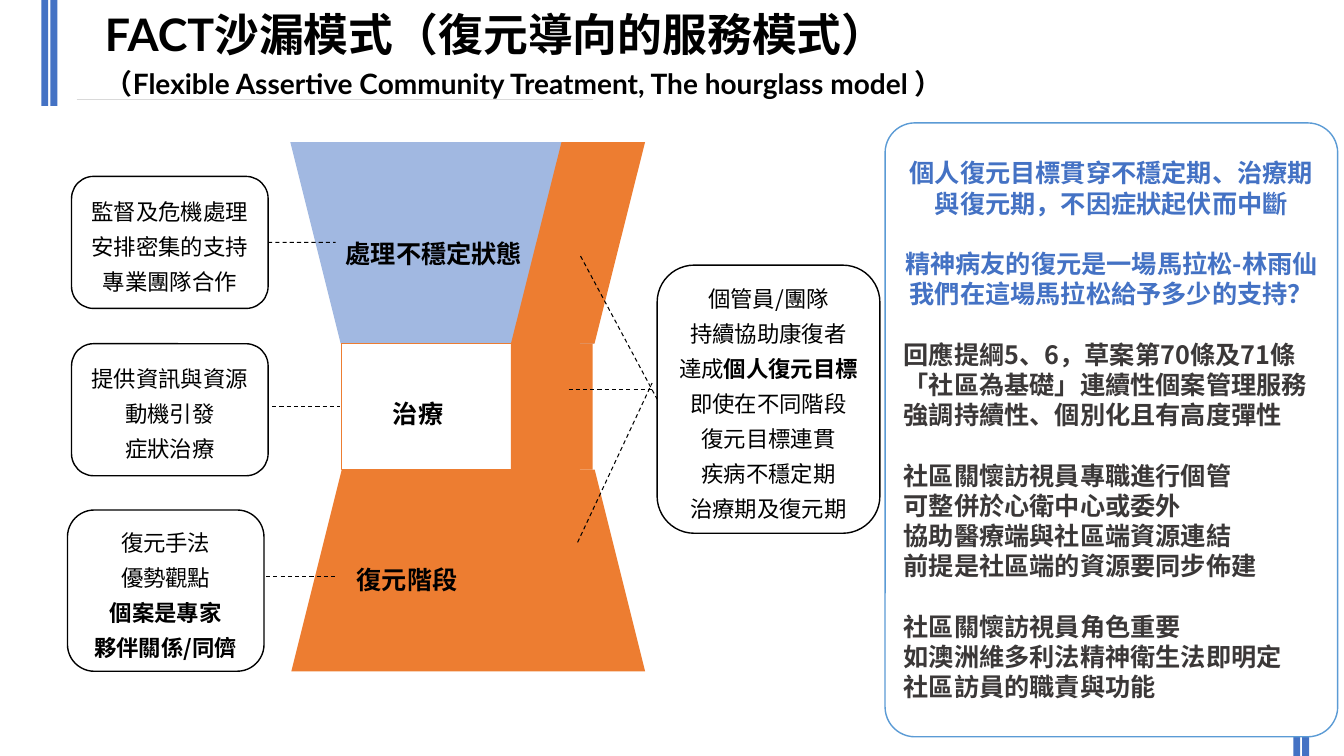
"""Build the FACT hourglass model slide."""
from dataclasses import dataclass
from typing import Optional

import pptx
import pptx.dml.color
import pptx.enum.dml
import pptx.enum.shapes
import pptx.enum.text
import pptx.oxml.ns
import pptx.shapes.autoshape
import pptx.slide
import pptx.text.text
import pptx.util
from lxml import etree

Pt = pptx.util.Pt
Color = pptx.dml.color.RGBColor
Kind = pptx.enum.shapes.MSO_SHAPE
Align = pptx.enum.text.PP_ALIGN
Anchor = pptx.enum.text.MSO_ANCHOR

BLACK = Color(0x00, 0x00, 0x00)
WHITE = Color(0xFF, 0xFF, 0xFF)
BLUE = Color(0x44, 0x72, 0xC4)
SKY = Color(0x5B, 0x9B, 0xD5)
ORANGE = Color(0xED, 0x7D, 0x31)
CHARCOAL = Color(0x3B, 0x38, 0x38)
SILVER = Color(0xD9, 0xD9, 0xD9)
BODY_FONT = "Noto Sans CJK SC"
TITLE_FONT = "Lato"


@dataclass(frozen=True)
class Span:
    text: str
    size: float = 16
    bold: bool = False
    color: Color = BLACK
    font: str = BODY_FONT


@dataclass(frozen=True)
class Para:
    spans: tuple[Span, ...]
    align: Align = Align.CENTER
    pitch: float = 25
    before: float = 0


@dataclass(frozen=True)
class Box:
    left: float
    top: float
    width: float
    height: float
    kind: Kind = Kind.RECTANGLE
    fill: Optional[Color] = None
    line: Optional[Color] = None
    adjust: Optional[float] = None
    rotation: float = 0
    alpha: Optional[int] = None
    paras: tuple[Para, ...] = ()


@dataclass(frozen=True)
class Link:
    start: tuple[float, float]
    end: tuple[float, float]
    start_box: Optional[str] = None
    end_box: Optional[str] = None


def lines(*texts: str, bold: bool = False) -> tuple[Para, ...]:
    return tuple(Para((Span(text, bold=bold),)) for text in texts)


def panel(texts: list[str], color: Color, align: Align, before: float) -> tuple[Para, ...]:
    return tuple(
        Para((Span(text, 18, True, color),), align, 21.6, 0 if index else before)
        for index, text in enumerate(texts)
    )


def label(text: str) -> tuple[Para, ...]:
    return (Para((Span(text, 18, True),), Align.LEFT, 28),)


TITLE = (
    Para((Span("FACT沙漏模式（復元導向的服務模式）", 32, True, BLACK, TITLE_FONT),), Align.LEFT, 38.4),
    Para(
        (Span("（Flexible Assertive Community Treatment, The hourglass model ）", 20, True, BLACK, TITLE_FONT),),
        Align.LEFT, 24, 4,
    ),
)

BARS = [
    Box(left, top, 5, height, fill=BLUE)
    for top, height, lefts in ((0, 75.6, (29.5, 36)), (521.3, 18.7, (923.8, 930.2)))
    for left in lefts
]

HOURGLASS = [
    Box(207.4, 101.5, 252.7, 144, Kind.TRAPEZOID, BLUE, rotation=180, alpha=50),
    Box(244.1, 245.5, 169.9, 90, fill=WHITE, line=ORANGE),
    Box(208.1, 335.5, 252.7, 144, Kind.TRAPEZOID, ORANGE),
    Box(365, 101.5, 95.8, 144, Kind.PARALLELOGRAM, ORANGE, adjust=0.377),
    Box(365, 245.5, 58.3, 90, fill=ORANGE),
]

LABELS = [
    Box(239.8, 160.6, 157, 33.1, paras=label("處理不穩定狀態")),
    Box(273.6, 274.3, 70.6, 33.1, paras=label("治療")),
    Box(247.7, 393.1, 108, 33.1, paras=label("復元階段")),
]

NOTES = {
    "crisis": Box(51.1, 126, 140.4, 94.3, Kind.ROUNDED_RECTANGLE, WHITE, BLACK,
                  paras=lines("監督及危機處理", "安排密集的支持", "專業團隊合作")),
    "treatment": Box(51.1, 245.5, 140.4, 94.3, Kind.ROUNDED_RECTANGLE, WHITE, BLACK,
                     paras=lines("提供資訊與資源", "動機引發", "症狀治療")),
    "recovery": Box(48.2, 364.3, 140.4, 115.2, Kind.ROUNDED_RECTANGLE, WHITE, BLACK,
                    paras=lines("復元手法", "優勢觀點") + lines("個案是專家", "夥伴關係/同儕", bold=True)),
    "manager": Box(469.4, 189.4, 159.1, 191.5, Kind.ROUNDED_RECTANGLE, WHITE, BLACK,
                   paras=lines("個管員/團隊", "持續協助康復者")
                   + (Para((Span("達成"), Span("個人復元目標", bold=True))),)
                   + lines("即使在不同階段", "復元目標連貫", "疾病不穩定期", "治療期及復元期")),
    "policy": Box(
        632.2, 87.8, 323.3, 438.5, Kind.ROUNDED_RECTANGLE, WHITE, SKY, 0.066,
        paras=panel(["個人復元目標貫穿不穩定期、治療期與復元期，不因症狀起伏而中斷"], BLUE, Align.CENTER, 0)
        + panel(["精神病友的復元是一場馬拉松-林雨仙", "我們在這場馬拉松給予多少的支持？"], BLUE, Align.CENTER, 21.6)
        + panel(["回應提綱5、6，草案第70條及71條", "「社區為基礎」連續性個案管理服務",
                 "強調持續性、個別化且有高度彈性"], CHARCOAL, Align.LEFT, 21.6)
        + panel(["社區關懷訪視員專職進行個管", "可整併於心衛中心或委外",
                 "協助醫療端與社區端資源連結", "前提是社區端的資源要同步佈建"], CHARCOAL, Align.LEFT, 21.6)
        + panel(["社區關懷訪視員角色重要", "如澳洲維多利法精神衛生法即明定",
                 "社區訪員的職責與功能"], CHARCOAL, Align.LEFT, 21.6)),
}

LINKS = [
    Link((191.5, 173.2), (239.8, 173.2), start_box="crisis"),
    Link((194.4, 290.2), (242.6, 290.2)),
    Link((190.1, 411.8), (239, 411.8)),
    Link((414.7, 182.9), (469.4, 285.1), end_box="manager"),
    Link((406.1, 277.9), (465.8, 277.9)),
    Link((412.6, 387.4), (465.8, 273.6)),
]


def write(frame: pptx.text.text.TextFrame, paras: tuple[Para, ...]) -> None:
    frame.word_wrap = True
    frame.auto_size = pptx.enum.text.MSO_AUTO_SIZE.NONE
    for index, para in enumerate(paras):
        target = frame.add_paragraph() if index else frame.paragraphs[0]
        target.alignment = para.align
        target.line_spacing = Pt(para.pitch)
        target.space_before = Pt(para.before)
        for span in para.spans:
            run = target.add_run()
            run.text = span.text
            run.font.name = span.font
            run.font.size = Pt(span.size)
            run.font.bold = span.bold
            run.font.color.rgb = span.color


def draw_box(page: pptx.slide.Slide, box: Box) -> pptx.shapes.autoshape.Shape:
    place = [Pt(value) for value in (box.left, box.top, box.width, box.height)]
    if box.fill is None:
        shape = page.shapes.add_textbox(*place)
        write(shape.text_frame, box.paras)
        return shape
    shape = page.shapes.add_shape(box.kind, *place)
    shape.shadow.inherit = False
    shape.rotation = box.rotation
    shape.fill.solid()
    shape.fill.fore_color.rgb = box.fill
    if box.alpha is not None:
        color = shape.fill._xPr.find(".//" + pptx.oxml.ns.qn("a:srgbClr"))
        etree.SubElement(color, pptx.oxml.ns.qn("a:alpha"), val=str(box.alpha * 1000))
    if box.adjust is not None:
        shape.adjustments[0] = box.adjust
    if box.line is None:
        shape.line.fill.background()
    else:
        shape.line.color.rgb = box.line
        shape.line.width = Pt(1)
    if box.paras:
        shape.text_frame.vertical_anchor = Anchor.MIDDLE
        write(shape.text_frame, box.paras)
    return shape


def draw_line(page: pptx.slide.Slide, link: Link, color: Color, width: float, dashed: bool,
              shapes: dict[str, pptx.shapes.autoshape.Shape]) -> None:
    ends = [Pt(value) for value in link.start + link.end]
    line = page.shapes.add_connector(pptx.enum.shapes.MSO_CONNECTOR.STRAIGHT, *ends)
    line.line.color.rgb = color
    line.line.width = Pt(width)
    if dashed:
        line.line.dash_style = pptx.enum.dml.MSO_LINE.DASH
    etree.SubElement(line._element.spPr, pptx.oxml.ns.qn("a:effectLst"))
    if link.start_box:
        line.begin_connect(shapes[link.start_box], 3)
    if link.end_box:
        line.end_connect(shapes[link.end_box], 1)


def main() -> None:
    deck = pptx.Presentation()
    deck.slide_width, deck.slide_height = Pt(960), Pt(540)
    page = deck.slides.add_slide(deck.slide_layouts[5])
    title = page.shapes.title
    title.left, title.top, title.width, title.height = Pt(67.7), Pt(1.4), Pt(892), Pt(121.7)
    title.text_frame.vertical_anchor = Anchor.TOP
    write(title.text_frame, TITLE)
    for bar in BARS:
        draw_box(page, bar)
    draw_line(page, Link((54.7, 71.3), (423.4, 71.3)), SILVER, 0.5, False, {})
    for box in HOURGLASS + LABELS:
        draw_box(page, box)
    notes = {name: draw_box(page, box) for name, box in NOTES.items()}
    for link in LINKS:
        draw_line(page, link, BLACK, 0.75, True, notes)
    deck.save("out.pptx")


if __name__ == "__main__":
    main()
